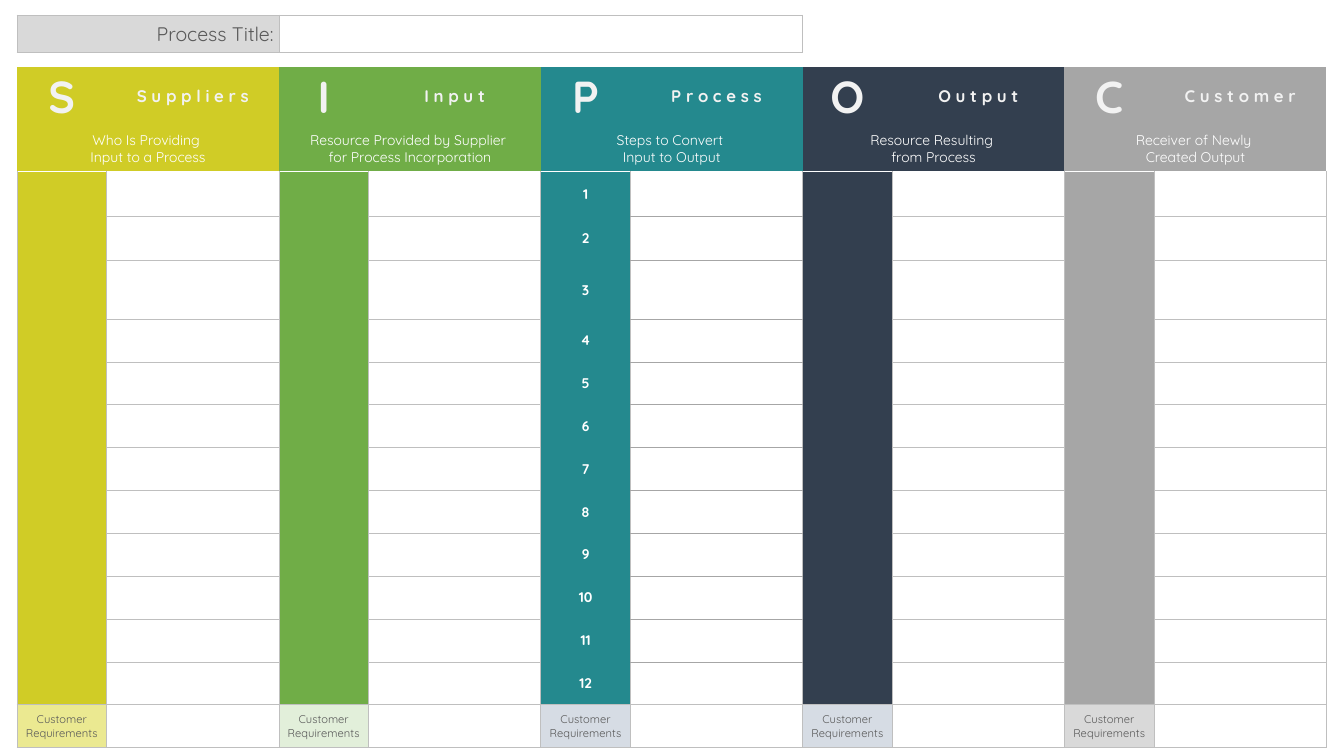
from lxml.etree import SubElement
from pptx import Presentation
from pptx.dml.color import RGBColor
from pptx.enum.text import MSO_ANCHOR, PP_ALIGN
from pptx.oxml.ns import qn
from pptx.util import Cm, Pt

FONT = "Quicksand"
COLORS = {
    "suppliers": "D0CC26", "input": "70AD47", "process": "24898E",
    "output": "333F4F", "customer": "A6A6A6",
    "suppliers_tint": "EBE991", "input_tint": "E2EFDA", "process_tint": "D6DCE4",
    "output_tint": "D6DCE4", "customer_tint": "D9D9D9",
    "label": "D9D9D9", "rule": "BFBFBF", "dark_rule": "A6A6A6",
    "text": "595959", "letter": "F2F2F2", "white": "FFFFFF",
}
# colour key, letter, heading, description lines
STAGES = [
    ("suppliers", "S", "S u p p l i e r s", ("Who Is Providing ", "Input to a Process")),
    ("input", "I", "I n p u t", ("Resource Provided by Supplier ", "for Process Incorporation")),
    ("process", "P", "P r o c e s s", ("Steps to Convert ", "Input to Output")),
    ("output", "O", "O u t p u t", ("Resource Resulting ", "from Process")),
    ("customer", "C", "C u s t o m e r", ("Receiver of Newly ", "Created Output")),
]
TITLE_LABEL = "Process Title:"
FOOTER_LABEL = "Customer Requirements"
STEP_COUNT = 12

BAND_WIDTH, ENTRY_WIDTH = 2.26, 4.34
ROW_HEIGHTS = [0.94, 0.37, 1.47, 1.17, 1.12, 1.12, 1.47] + [1.08] * 10
TITLE_ROW, GAP_ROW, HEADING_ROW, DESCRIPTION_ROW, FIRST_STEP = range(5)
LAST_STEP = FIRST_STEP + STEP_COUNT - 1
FOOTER_ROW = LAST_STEP + 1
TITLE_COLUMNS = 6
PROCESS_ENTRY = 5

RULE = ("rule", 0.5)
DARK_RULE = ("dark_rule", 0.5)
WHITE_RULE = ("white", 1)


def cell_borders(row, col):
    """Return the visible borders of a cell as {side: (colour key, points)}."""
    boxed = dict.fromkeys("LRTB", RULE)
    if row == TITLE_ROW:
        if col < TITLE_COLUMNS:
            return boxed
        return {"L": RULE} if col == TITLE_COLUMNS else {}
    if row == GAP_ROW:
        return {"T": RULE} if col < TITLE_COLUMNS else {}
    if row == HEADING_ROW:
        return {}
    if row == DESCRIPTION_ROW:
        return {"B": WHITE_RULE}
    if row == FOOTER_ROW:
        return boxed
    if col % 2 == 0:
        borders = {"L": RULE, "R": RULE}
        if row == LAST_STEP:
            borders["B"] = RULE
    else:
        borders = boxed
        if col == PROCESS_ENTRY:
            borders["T"] = DARK_RULE
            if row < LAST_STEP:
                borders["B"] = DARK_RULE
    if row == FIRST_STEP:
        borders["T"] = WHITE_RULE
    return borders


def draw_borders(cell, borders):
    properties = cell._tc.get_or_add_tcPr()
    for side in "LRTB":
        line = SubElement(properties, qn(f"a:ln{side}"))
        if side in borders:
            color, points = borders[side]
            line.set("w", str(Pt(points)))
            fill = SubElement(line, qn("a:solidFill"))
            SubElement(fill, qn("a:srgbClr")).set("val", COLORS[color])
        else:
            SubElement(line, qn("a:noFill"))


def fill_cell(cell, color):
    cell.fill.solid()
    cell.fill.fore_color.rgb = RGBColor.from_string(COLORS[color])


def write(cell, lines, size, color, bold=False, align=PP_ALIGN.CENTER):
    paragraph = cell.text_frame.paragraphs[0]
    paragraph.alignment = align
    for index, line in enumerate(lines):
        if index:
            paragraph.add_line_break()
        run = paragraph.add_run()
        run.text = line
        run.font.name = FONT
        run.font.size = Pt(size)
        run.font.bold = bold
        run.font.color.rgb = RGBColor.from_string(COLORS[color])


def add_sipoc_table(slide):
    """Add the empty grid with its sizes, borders and margins."""
    columns = [BAND_WIDTH, ENTRY_WIDTH] * len(STAGES)
    table = slide.shapes.add_table(
        len(ROW_HEIGHTS), len(columns), Cm(0.43), Cm(0.38),
        Cm(sum(columns)), Cm(sum(ROW_HEIGHTS))).table
    table.first_row = False
    table.horz_banding = False
    for col, width in enumerate(columns):
        table.columns[col].width = Cm(width)
    for row, height in enumerate(ROW_HEIGHTS):
        table.rows[row].height = Cm(height)
        for col in range(len(columns)):
            cell = table.cell(row, col)
            draw_borders(cell, cell_borders(row, col))
            cell.fill.background()
            cell.vertical_anchor = MSO_ANCHOR.MIDDLE
            cell.margin_left = cell.margin_right = 0
            cell.margin_top = cell.margin_bottom = 0
            if row == GAP_ROW:
                end = SubElement(cell.text_frame.paragraphs[0]._p, qn("a:endParaRPr"))
                end.set("sz", "400")
    return table


def fill_title(table):
    label, entry = table.cell(TITLE_ROW, 0), table.cell(TITLE_ROW, 2)
    label.merge(table.cell(TITLE_ROW, 1))
    entry.merge(table.cell(TITLE_ROW, TITLE_COLUMNS - 1))
    fill_cell(label, "label")
    label.margin_right = Cm(0.13)
    write(label, [TITLE_LABEL], 14, "text", align=PP_ALIGN.RIGHT)


def fill_stage(table, band, stage):
    color, letter, heading, description = stage
    letter_cell = table.cell(HEADING_ROW, band)
    heading_cell = table.cell(HEADING_ROW, band + 1)
    description_cell = table.cell(DESCRIPTION_ROW, band)
    footer_cell = table.cell(FOOTER_ROW, band)
    description_cell.merge(table.cell(DESCRIPTION_ROW, band + 1))

    for cell in (letter_cell, heading_cell, description_cell):
        fill_cell(cell, color)
    write(letter_cell, [letter], 32, "letter", bold=True)
    write(heading_cell, [heading], 12, "letter", bold=True)
    write(description_cell, description, 10, "white")

    for step in range(STEP_COUNT):
        step_cell = table.cell(FIRST_STEP + step, band)
        fill_cell(step_cell, color)
        if color == "process":
            write(step_cell, [str(step + 1)], 10, "white", bold=True)

    fill_cell(footer_cell, f"{color}_tint")
    write(footer_cell, [FOOTER_LABEL], 8, "text")


def main():
    deck = Presentation()
    deck.slide_width, deck.slide_height = Cm(33.87), Cm(19.05)
    slide = deck.slides.add_slide(deck.slide_layouts[6])
    table = add_sipoc_table(slide)
    fill_title(table)
    for index, stage in enumerate(STAGES):
        fill_stage(table, 2 * index, stage)
    deck.save("out.pptx")


if __name__ == "__main__":
    main()
